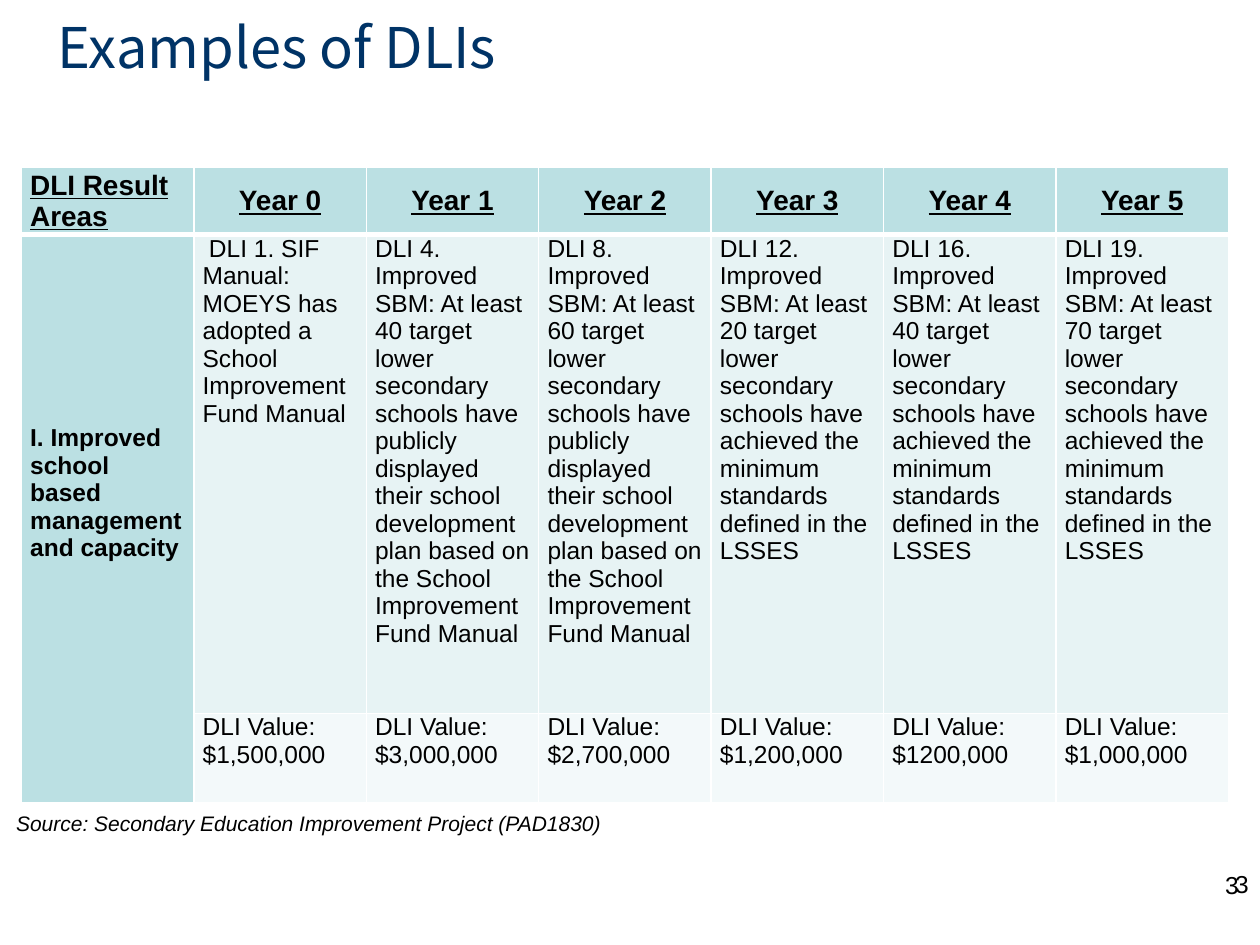
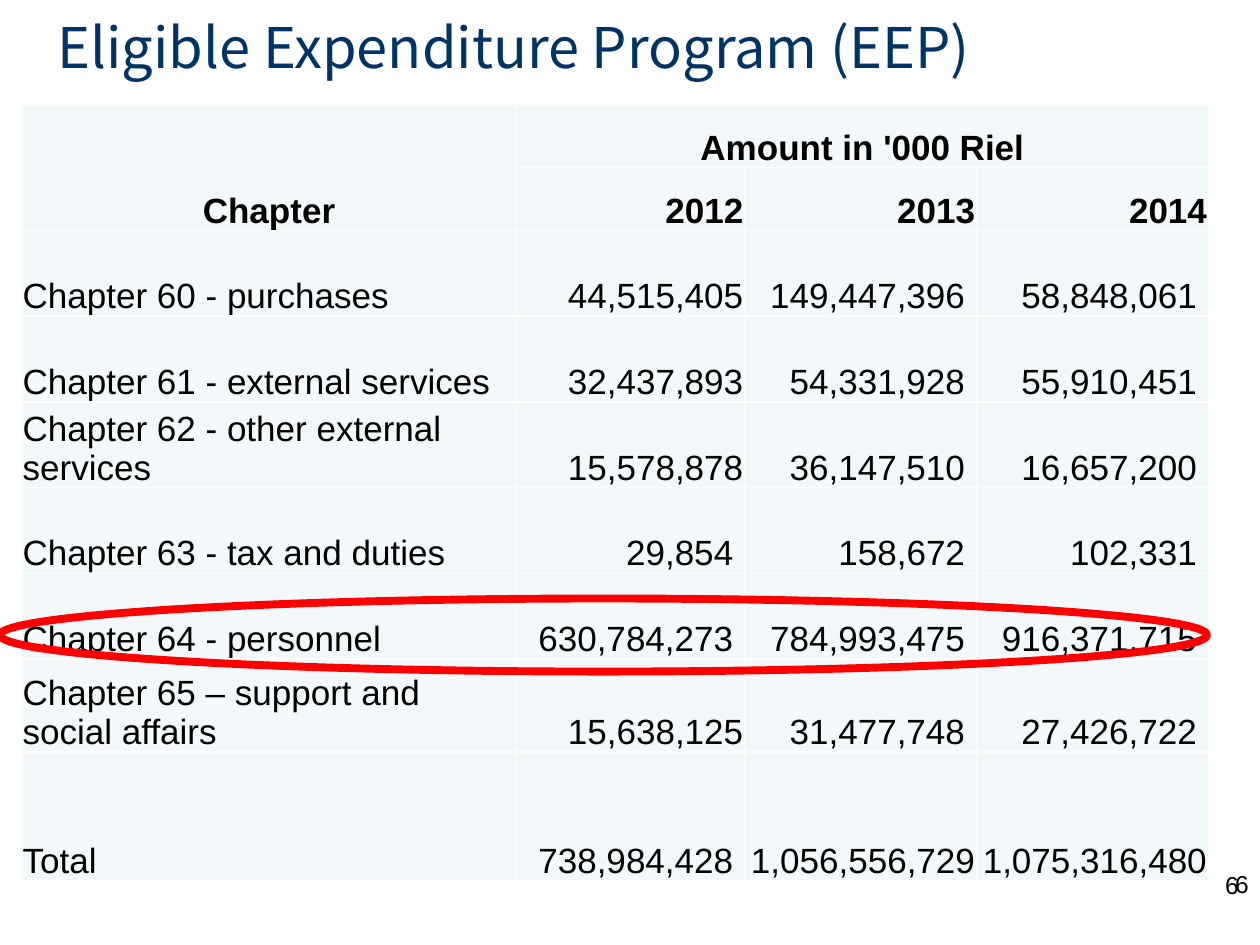
from lxml import etree
from pptx import Presentation
from pptx import util as u
from pptx.dml.color import RGBColor
from pptx.enum import shapes, text
from pptx.oxml import ns

LEFT, CENTER, RIGHT = text.PP_ALIGN.LEFT, text.PP_ALIGN.CENTER, text.PP_ALIGN.RIGHT
TOP, MIDDLE, BOTTOM = text.MSO_ANCHOR.TOP, text.MSO_ANCHOR.MIDDLE, text.MSO_ANCHOR.BOTTOM


def color(value):
    """Turn a hex string into a colour."""
    return RGBColor.from_string(value)


class Deck:
    """Hold the shared style and the current slide."""

    TITLE_FONT, BODY_FONT = "Noto Sans CJK JP", "Arial"
    NAVY, BLACK, WHITE, RED = "003366", "000000", "FFFFFF", "FF0000"
    TEAL, PALE, PALEST = "BBE0E3", "E7F3F4", "F3F9FA"

    def __init__(self):
        """Start an empty presentation."""
        self.presentation = Presentation()
        self.presentation.slide_width = u.Inches(10)
        self.presentation.slide_height = u.Inches(7.5)
        self.slide = None

    def add_slide(self, title, number):
        """Add a blank slide with its title and page numbers."""
        self.slide = self.presentation.slides.add_slide(self.presentation.slide_layouts[6])
        self.add_text(title, (0.36, 0.06, 9, 0.61), 32, anchor=MIDDLE,
                      font=self.TITLE_FONT, ink=self.NAVY)
        for box in ((7.68, 6.85, 2.33, 0.36), (7.6, 6.86, 2.33, 0.34)):
            self.add_text(number, box, 14, align=RIGHT)

    def format_text(self, frame, size, align=LEFT, font=BODY_FONT, ink=BLACK,
                    bold=False, italic=False, underline=False):
        """Format every run of a text frame."""
        for paragraph in frame.paragraphs:
            paragraph.alignment = align
            for run in paragraph.runs:
                run.font.name, run.font.size = font, u.Pt(size)
                run.font.bold, run.font.italic, run.font.underline = bold, italic, underline
                run.font.color.rgb = color(ink)

    def add_text(self, words, box, size, anchor=TOP, **style):
        """Add a text box."""
        frame = self.slide.shapes.add_textbox(*map(u.Inches, box)).text_frame
        frame.word_wrap = True
        frame.vertical_anchor = anchor
        frame.text = words
        self.format_text(frame, size, **style)

    def add_table(self, left, top, widths, heights):
        """Add a plain table with the given column widths and row heights."""
        table = self.slide.shapes.add_table(
            len(heights), len(widths), u.Inches(left), u.Inches(top),
            u.Inches(sum(widths)), u.Inches(sum(heights))).table
        table.first_row = table.horz_banding = False
        for column, width in zip(table.columns, widths):
            column.width = u.Inches(width)
        for row, height in zip(table.rows, heights):
            row.height = u.Inches(height)
        return table

    def set_cell(self, cell, words, size, fill, margins, anchor=TOP,
                 top_line=1, bottom_line=1, **style):
        """Fill a table cell, with margins as left, top, right, bottom."""
        properties = cell._tc.get_or_add_tcPr()
        for side, width in zip("LRTB", (1, 1, top_line, bottom_line)):
            line = etree.SubElement(properties, ns.qn(f"a:ln{side}"), w=str(u.Pt(width)))
            solid = etree.SubElement(line, ns.qn("a:solidFill"))
            etree.SubElement(solid, ns.qn("a:srgbClr"), val=self.WHITE)
        cell.fill.solid()
        cell.fill.fore_color.rgb = color(fill)
        (cell.margin_left, cell.margin_top,
         cell.margin_right, cell.margin_bottom) = map(u.Inches, margins)
        cell.vertical_anchor = anchor
        cell.text_frame.text = words
        self.format_text(cell.text_frame, size, **style)

    def add_ring(self, box, ink, width):
        """Add an unfilled ellipse."""
        shape = self.slide.shapes.add_shape(shapes.MSO_SHAPE.OVAL, *map(u.Inches, box))
        shape.shadow.inherit = False
        shape.fill.background()
        shape.line.color.rgb = color(ink)
        shape.line.width = u.Pt(width)


def add_indicator_slide(deck):
    """Build the table of indicators by year."""
    displayed = ("Improved SBM: At least {} target lower secondary schools have publicly displayed "
                 "their school development plan based on the School Improvement Fund Manual")
    achieved = ("Improved SBM: At least {} target lower secondary schools have achieved "
                "the minimum standards defined in the LSSES")
    years = [
        ("DLI 1. SIF Manual: MOEYS has adopted a School Improvement Fund Manual", "$1,500,000"),
        ("DLI 4. " + displayed.format(40), "$3,000,000"),
        ("DLI 8. " + displayed.format(60), "$2,700,000"),
        ("DLI 12. " + achieved.format(20), "$1,200,000"),
        ("DLI 16. " + achieved.format(40), "$1200,000"),
        ("DLI 19. " + achieved.format(70), "$1,000,000"),
    ]
    margins = (0.07, 0, 0.07, 0)
    deck.add_slide("Examples of DLIs", "3")
    table = deck.add_table(0.17, 1.33, [9.58 / 7] * 7, [0.53, 3.8, 0.71])
    table.cell(1, 0).merge(table.cell(2, 0))
    header = dict(size=16, fill=deck.TEAL, margins=margins, anchor=MIDDLE,
                  bottom_line=3, bold=True, underline=True)
    deck.set_cell(table.cell(0, 0), "DLI Result Areas", **header)
    deck.set_cell(table.cell(1, 0), "I. Improved school based management and capacity", 14,
                  deck.TEAL, (0.07, 0, 0.07, 0.41), MIDDLE, top_line=3, bold=True)
    for year, (indicator, value) in enumerate(years):
        column = year + 1
        deck.set_cell(table.cell(0, column), f"Year {year}", align=CENTER, **header)
        deck.set_cell(table.cell(1, column), indicator, 14, deck.PALE, margins, top_line=3)
        deck.set_cell(table.cell(2, column), f"DLI Value:\n{value}", 14, deck.PALEST, margins)
    first_paragraph = table.cell(1, 1).text_frame.paragraphs[0]
    first_paragraph._p.get_or_add_pPr().set("indent", str(u.Inches(0.05)))
    deck.add_text("Source: Secondary Education Improvement Project (PAD1830)",
                  (0.03, 6.38, 5, 0.3), 12, italic=True)


def add_expenditure_slide(deck):
    """Build the table of expenditure by chapter."""
    chapters = [
        ("Chapter 60 - purchases", "44,515,405", "149,447,396", "58,848,061"),
        ("Chapter 61 - external services", "32,437,893", "54,331,928", "55,910,451"),
        ("Chapter 62 - other external services", "15,578,878", "36,147,510", "16,657,200"),
        ("Chapter 63 - tax and duties", "29,854", "158,672", "102,331"),
        ("Chapter 64 - personnel", "630,784,273", "784,993,475", "916,371,715"),
        ("Chapter 65 – support and social affairs", "15,638,125", "31,477,748", "27,426,722"),
        ("Total", "738,984,428", "1,056,556,729", "1,075,316,480"),
    ]
    deck.add_slide("Eligible Expenditure Program (EEP)", "6")
    table = deck.add_table(0.17, 0.83, [3.93, 1.81, 1.84, 1.84],
                           [0.5] * 2 + [0.68] * 5 + [0.74, 1.02])
    table.cell(0, 0).merge(table.cell(1, 0))
    table.cell(0, 1).merge(table.cell(0, 3))
    flush, inset = (0.01, 0.01, 0.01, 0), (0.01, 0.01, 0.09, 0)
    body = dict(size=20, fill=deck.PALEST, anchor=BOTTOM)
    header = dict(body, margins=flush, bold=True)
    deck.set_cell(table.cell(0, 0), "Chapter", align=CENTER, **header)
    deck.set_cell(table.cell(0, 1), "Amount in '000 Riel", align=CENTER, **header)
    for column, year in enumerate(("2012", "2013", "2014"), 1):
        deck.set_cell(table.cell(1, column), year, align=RIGHT, **header)
    for row, (chapter, *amounts) in enumerate(chapters, 2):
        deck.set_cell(table.cell(row, 0), chapter, margins=flush, **body)
        for column, amount in enumerate(amounts, 1):
            at_edge = len(amount) > 11 or (column == 1 and len(amount) == 10)
            deck.set_cell(table.cell(row, column), amount, align=RIGHT,
                          margins=flush if at_edge else inset, **body)
    deck.add_ring((0, 4.75, 9.58, 0.58), deck.RED, 4.5)


def main():
    """Build and save the presentation."""
    deck = Deck()
    add_indicator_slide(deck)
    add_expenditure_slide(deck)
    deck.presentation.save("out.pptx")


if __name__ == "__main__":
    main()
